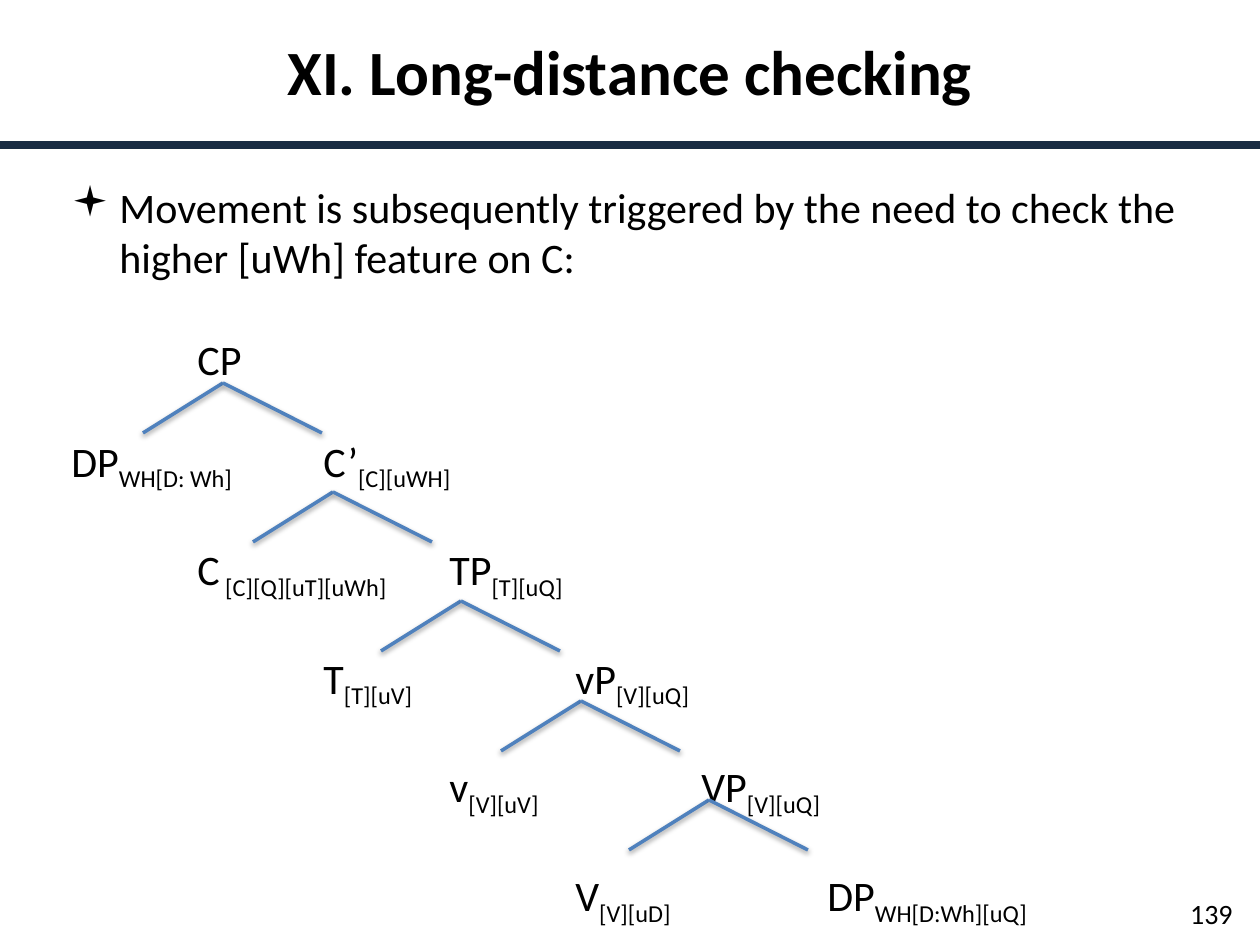
from lxml.etree import SubElement
from pptx import Presentation
from pptx.dml.color import RGBColor
from pptx.enum.shapes import MSO_CONNECTOR
from pptx.enum.text import MSO_ANCHOR, PP_ALIGN
from pptx.oxml.ns import qn
from pptx.util import Emu, Pt

PX = 914400 // 126
INCH = 914400
FONT = "Calibri"
BLACK, NAVY, BLUE = "000000", "192C43", "4F81BD"
BODY_SIZE = 24
ROW_GAP = 29.3  # one line of body text, in points
BULLET_INDENT = 48
LEFT_LEG, RIGHT_LEG, LEG_DROP = 80, 99, 50

# Each row: depth in the tree, then its nodes as (label, subscript features).
TREE_ROWS = [
    (1, [("CP", "")]),
    (0, [("DP", "WH[D: Wh]"), ("C’", "[C][uWH]")]),
    (1, [("C", " [C][Q][uT][uWh]"), ("TP", "[T][uQ]")]),
    (2, [("T", "[T][uV]"), ("vP", "[V][uQ]")]),
    (3, [("v", "[V][uV]"), ("VP", "[V][uQ]")]),
    (4, [("V", "[V][uD]"), ("DP", "WH[D:Wh][uQ]")]),
]
BRANCH_APEXES = [(223, 383), (333, 492), (461, 601), (581, 701), (709, 800)]


def px(length):
    return Emu(length * PX)


def color(hex_code):
    return RGBColor.from_string(hex_code)


def add_run(paragraph, text, size=BODY_SIZE, bold=False, subscript=False):
    run = paragraph.add_run()
    run.text = text
    run.font.name = FONT
    run.font.size = Pt(size)
    run.font.bold = bold
    run.font.color.rgb = color(BLACK)
    if subscript:
        run.font._element.set("baseline", "-25000")


def add_text_frame(slide, left, top, width, height):
    frame = slide.shapes.add_textbox(px(left), px(top), px(width), px(height)).text_frame
    frame.word_wrap = True
    return frame


def add_line(slide, start, end, line_color, width, shadow=False):
    line = slide.shapes.add_connector(
        MSO_CONNECTOR.STRAIGHT, *(px(value) for value in start + end))
    line.line.color.rgb = color(line_color)
    line.line.width = Pt(width)
    effects = SubElement(line._element.spPr, qn("a:effectLst"))
    if shadow:
        outer = SubElement(effects, qn("a:outerShdw"), blurRad=str(Pt(3.1)),
                           dist=str(Pt(1.6)), dir="5400000", rotWithShape="0")
        black = SubElement(outer, qn("a:srgbClr"), val=BLACK)
        SubElement(black, qn("a:alpha"), val="38000")


def add_branch(slide, apex):
    x, y = apex
    for foot_x in (x - LEFT_LEG, x + RIGHT_LEG):
        add_line(slide, apex, (foot_x, y + LEG_DROP), BLUE, 2, shadow=True)


def set_bullet(paragraph):
    properties = paragraph._p.get_or_add_pPr()
    properties.set("marL", str(px(BULLET_INDENT)))
    properties.set("indent", str(-px(BULLET_INDENT)))
    SubElement(properties, qn("a:buFont"), typeface="Wingdings")
    SubElement(properties, qn("a:buChar"), char="▪")


def add_tree_row(frame, depth, nodes):
    """Set the nodes at tab stops two inches apart, starting at the depth."""
    row = frame.add_paragraph()
    row.space_before = Pt(ROW_GAP)
    tab_stops = SubElement(row._p.get_or_add_pPr(), qn("a:tabLst"))
    for column, (label, features) in enumerate(nodes):
        stop = depth + 2 * column
        if stop:
            SubElement(tab_stops, qn("a:tab"), pos=str(stop * INCH), algn="l")
        add_run(row, "\t" + label if stop else label)
        if features:
            add_run(row, features, subscript=True)


def add_body(slide):
    frame = add_text_frame(slide, 59, 175, 1142, 776)
    statement = frame.paragraphs[0]
    set_bullet(statement)
    add_run(statement, "Movement is subsequently triggered by the need to check "
                       "the higher [uWh] feature on C:")
    for depth, nodes in TREE_ROWS:
        add_tree_row(frame, depth, nodes)


def add_title(slide):
    title = add_text_frame(slide, 10, 26, 1240, 89).paragraphs[0]
    title.alignment = PP_ALIGN.CENTER
    add_run(title, "XI. Long-distance checking", 36, bold=True)


def add_page_number(slide):
    frame = add_text_frame(slide, 1164, 888, 81, 50)
    frame.vertical_anchor = MSO_ANCHOR.MIDDLE
    frame.paragraphs[0].alignment = PP_ALIGN.RIGHT
    add_run(frame.paragraphs[0], "139", 16)


def main():
    deck = Presentation()
    deck.slide_width, deck.slide_height = px(1260), px(945)
    slide = deck.slides.add_slide(deck.slide_layouts[6])
    add_line(slide, (0, 145), (1260, 145), NAVY, 4.5)
    add_page_number(slide)
    add_title(slide)
    add_body(slide)
    for apex in BRANCH_APEXES:
        add_branch(slide, apex)
    deck.save("out.pptx")


if __name__ == "__main__":
    main()
